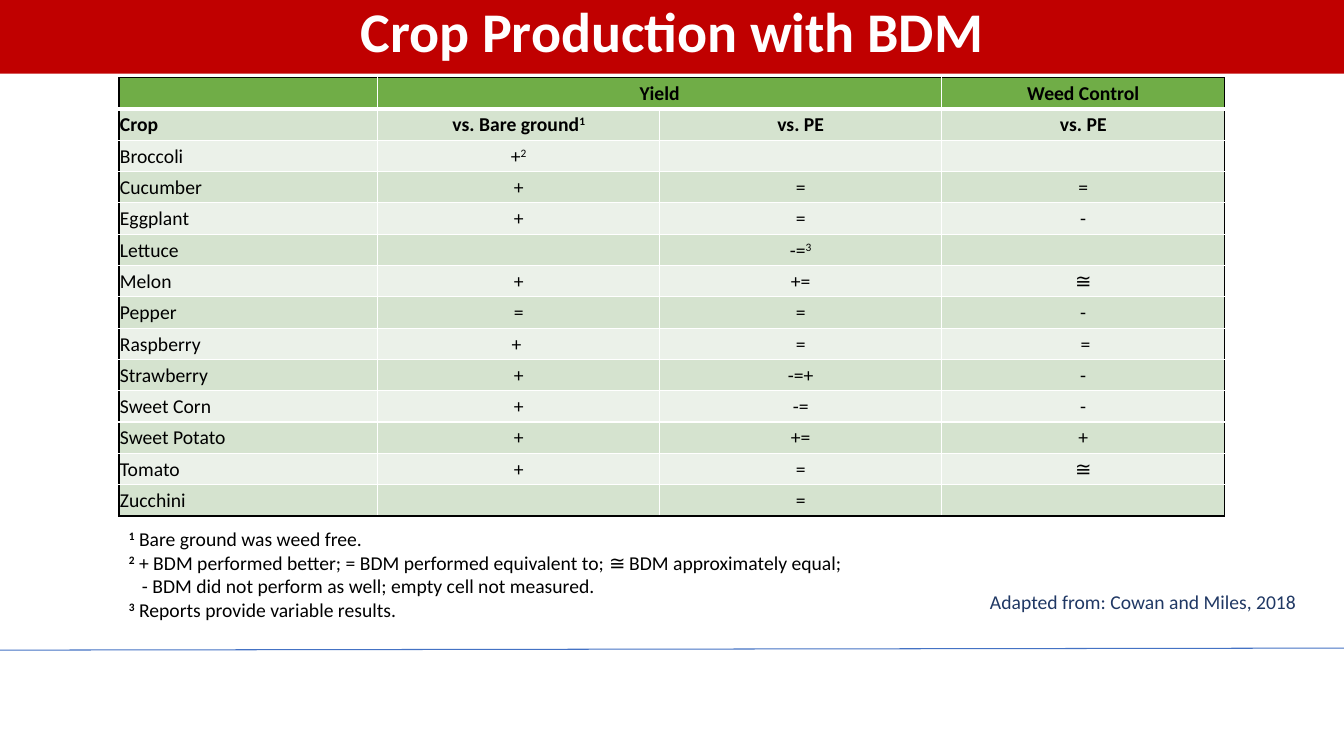
from dataclasses import dataclass

from lxml import etree
from pptx import Presentation
from pptx import util as u
from pptx.dml.color import RGBColor
from pptx.enum import shapes, text
from pptx.oxml import ns


@dataclass(frozen=True)
class Theme:
    font: str = "Calibri"
    title_size: int = 40
    body_size: int = 14
    band: str = "C00000"
    header: str = "70AD47"
    stripes: tuple = ("D5E3CF", "EBF1E9")
    ink: str = "000000"
    paper: str = "FFFFFF"
    credit: str = "203864"
    rule: str = "4472C4"


THEME = Theme()
WIDTH, HEIGHT = u.Inches(13.33), u.Inches(7.5)
COLUMN_SHARES = (0.234, 0.255, 0.255, 0.256)

# Text between carets is raised.
CROP_ROWS = [
    ("", "Yield", "", "Weed Control"),
    ("Crop", "vs. Bare ground^1^", "vs. PE", "vs. PE"),
    ("Broccoli", "+^2^", "", ""),
    ("Cucumber", "+", "=", "="),
    ("Eggplant", "+", "=", "-"),
    ("Lettuce", "", "-=^3^", ""),
    ("Melon", "+", "+=", "≅"),
    ("Pepper", "=", "=", "-"),
    ("Raspberry", "+ ", "=", " ="),
    ("Strawberry", "+", "-=+", "-"),
    ("Sweet Corn", "+", "-=", "-"),
    ("Sweet Potato", "+", "+=", "+"),
    ("Tomato", "+", "=", "≅"),
    ("Zucchini", "", "=", ""),
]
FOOTNOTES = [
    "^1^ Bare ground was weed free.",
    "^2^ + BDM performed better; = BDM performed equivalent to; "
    "≅ BDM approximately equal;\v- BDM did not perform as well; empty cell not measured.",
    "^3^ Reports provide variable results.",
]


def area(left, top, width, height):
    """Turn percentages of the slide into a box."""
    return (int(WIDTH * left / 100), int(HEIGHT * top / 100),
            int(WIDTH * width / 100), int(HEIGHT * height / 100))


def write(para, words, size=THEME.body_size, color=THEME.ink, bold=False,
          raised_bold=None, align=text.PP_ALIGN.LEFT):
    para.alignment = align
    for index, part in enumerate(words.split("^")):
        raised = index % 2 == 1
        for line_number, line in enumerate(part.split("\v")):
            if line_number:
                para.add_line_break()
            if not line:
                continue
            span = para.add_run()
            span.text = line
            span.font.name = THEME.font
            span.font.size = u.Pt(size)
            span.font.color.rgb = RGBColor.from_string(color)
            span.font.bold = raised_bold if raised and raised_bold is not None else bold
            if raised:
                span.font._element.set("baseline", "30000")
    if not words:
        end = etree.SubElement(para._p, ns.qn("a:endParaRPr"))
        end.set("sz", str(size * 100))


def add_panel(page, box, fill):
    panel = page.shapes.add_shape(shapes.MSO_SHAPE.RECTANGLE, *box)
    panel.shadow.inherit = False
    panel.fill.solid()
    panel.fill.fore_color.rgb = RGBColor.from_string(fill)
    panel.line.fill.background()
    panel.text_frame.word_wrap = True
    panel.text_frame.vertical_anchor = text.MSO_ANCHOR.TOP
    return panel.text_frame.paragraphs[0]


def add_title_band(page, box):
    para = add_panel(page, box, THEME.band)
    para.line_spacing = 0.9
    write(para, "Crop Production with BDM", size=THEME.title_size,
          color=THEME.paper, bold=True, align=text.PP_ALIGN.CENTER)


def add_credit(page, box):
    write(add_panel(page, box, THEME.paper), "Adapted from: Cowan and Miles, 2018",
          color=THEME.credit)


def add_bottom_rule(page, box):
    left, top, width, rise = box
    rule = page.shapes.add_connector(
        shapes.MSO_CONNECTOR.STRAIGHT, left, top + rise, left + width, top)
    rule.line.width = u.Pt(0.75)
    rule.line.color.rgb = RGBColor.from_string(THEME.rule)
    etree.SubElement(rule._element.spPr, ns.qn("a:effectLst"))


def add_footnotes(page, box):
    frame = page.shapes.add_textbox(*box).text_frame
    frame.word_wrap = True
    hang = u.Inches(0.13)
    for index, note in enumerate(FOOTNOTES):
        para = frame.add_paragraph() if index else frame.paragraphs[0]
        properties = para._p.get_or_add_pPr()
        properties.set("marL", str(hang))
        properties.set("indent", str(-hang))
        write(para, note, raised_bold=True)


def set_borders(cell, **borders):
    """Draw borders given as side=(colour, points), in the order L, R, T, B."""
    for side, (color, points) in borders.items():
        line = etree.SubElement(cell._tc.get_or_add_tcPr(), ns.qn(f"a:ln{side}"),
                                w=str(u.Pt(points)))
        fill = etree.SubElement(line, ns.qn("a:solidFill"))
        etree.SubElement(fill, ns.qn("a:srgbClr"), val=color)


def add_crop_table(page, box):
    last_row, last_column = len(CROP_ROWS) - 1, len(COLUMN_SHARES) - 1
    table = page.shapes.add_table(last_row + 1, last_column + 1, *box).table
    table.first_row = table.horz_banding = False
    for column, share in zip(table.columns, COLUMN_SHARES):
        column.width = int(box[2] * share)
    for row in table.rows:
        row.height = box[3] // len(CROP_ROWS)

    outer, inner, heavy = (THEME.ink, 1), (THEME.paper, 1), (THEME.paper, 3)
    for r, values in enumerate(CROP_ROWS):
        for c, value in enumerate(values):
            cell = table.cell(r, c)
            cell.margin_left = cell.margin_right = cell.margin_top = u.Inches(0.01)
            cell.margin_bottom = 0
            cell.vertical_anchor = text.MSO_ANCHOR.MIDDLE
            set_borders(cell,
                        L=outer if c == 0 else inner,
                        R=outer if c == last_column else inner,
                        T=outer if r == 0 else inner,
                        B=heavy if r == 0 else outer if r == last_row else inner)
            cell.fill.solid()
            fill = THEME.stripes[(r - 1) % 2] if r else THEME.header
            cell.fill.fore_color.rgb = RGBColor.from_string(fill)
            write(cell.text_frame.paragraphs[0], value, bold=r < 2,
                  align=text.PP_ALIGN.CENTER if c else text.PP_ALIGN.LEFT)
    table.cell(0, 1).merge(table.cell(0, 2))


def add_crop_slide(deck):
    page = deck.slides.add_slide(deck.slide_layouts[6])
    add_bottom_rule(page, area(0, 85.73, 100, 0.27))
    add_title_band(page, area(0, -0.13, 100, 9.87))
    add_footnotes(page, area(8.85, 69.07, 82.22, 13.87))
    add_crop_table(page, area(8.85, 10.27, 82.29, 58))
    add_credit(page, area(72.92, 77.33, 27.08, 4.53))


def main():
    deck = Presentation()
    deck.slide_width, deck.slide_height = WIDTH, HEIGHT
    add_crop_slide(deck)
    deck.save("out.pptx")


if __name__ == "__main__":
    main()
